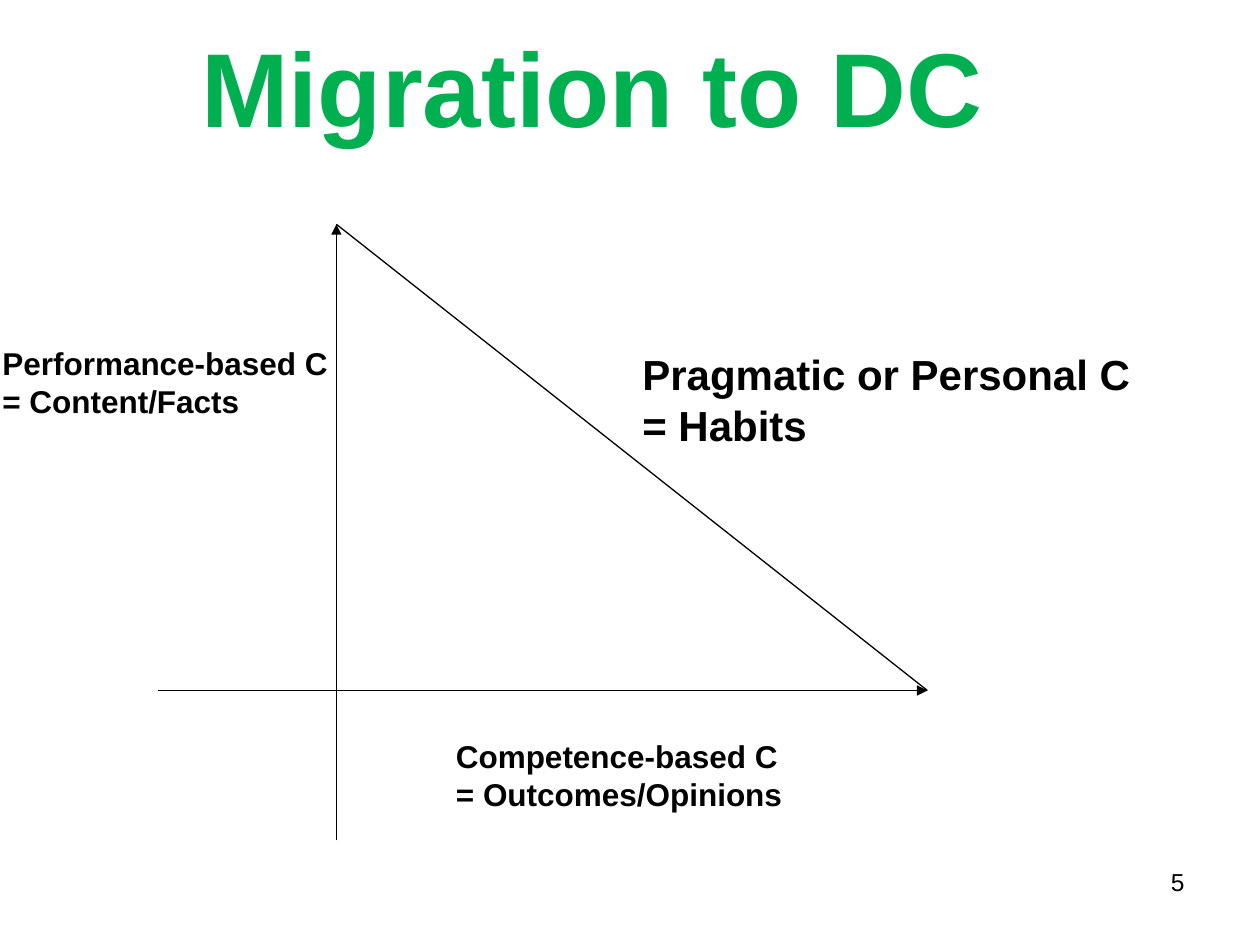
from typing import NamedTuple

from lxml.etree import SubElement
from pptx import Presentation
from pptx.dml.color import RGBColor
from pptx.enum.shapes import MSO_CONNECTOR
from pptx.enum.text import MSO_ANCHOR, MSO_AUTO_SIZE, PP_ALIGN
from pptx.oxml.ns import qn
from pptx.util import Inches, Pt

COLS, ROWS = 100, 75
WIDTH, HEIGHT = Inches(10), Inches(7.5)
BLACK, GREEN = "000000", "00B050"


class Point(NamedTuple):
    col: float
    row: float


class Box(NamedTuple):
    col: float
    row: float
    cols: float
    rows: float


class Line(NamedTuple):
    start: Point
    end: Point
    arrow: bool


class Label(NamedTuple):
    text: str
    box: Box
    size: int


TOP = Point(26.7, 17.8)
RIGHT = Point(73.6, 54.8)
LINES = [
    Line(Point(TOP.col, 66.7), TOP, True),
    Line(Point(12.5, RIGHT.row), RIGHT, True),
    Line(TOP, RIGHT, False),
]
LABELS = [
    Label("Competence-based C = Outcomes/Opinions", Box(35.2, 58, 29, 7.1), 18),
    Label("Performance-based C = Content/Facts", Box(-0.8, 26.8, 28.5, 7.1), 18),
    Label("Pragmatic or Personal C = Habits", Box(50, 27.2, 42, 9.1), 24),
]


def across(cols: float) -> int:
    return round(WIDTH * cols / COLS)


def down(rows: float) -> int:
    return round(HEIGHT * rows / ROWS)


def place(box: Box) -> tuple:
    return across(box.col), down(box.row), across(box.cols), down(box.rows)


def color(text: str) -> RGBColor:
    return RGBColor.from_string(text)


def write(frame, text: str, size: int, tint: str = BLACK,
          bold: bool = True, align=PP_ALIGN.LEFT) -> None:
    frame.word_wrap = True
    frame.text = text
    para = frame.paragraphs[0]
    para.alignment = align
    font = para.font
    font.name, font.size, font.bold = "Arial", Pt(size), bold
    font.color.rgb = color(tint)


def draw_line(slide, line: Line) -> None:
    start, end = line.start, line.end
    shape = slide.shapes.add_connector(
        MSO_CONNECTOR.STRAIGHT, across(start.col), down(start.row),
        across(end.col), down(end.row))
    shape.line.color.rgb = color(BLACK)
    shape.line.width = Pt(0.75)
    if line.arrow:
        SubElement(shape.line._get_or_add_ln(), qn("a:tailEnd"), type="triangle")
    SubElement(shape._element.spPr, qn("a:effectLst"))


def draw_label(slide, label: Label) -> None:
    frame = slide.shapes.add_textbox(*place(label.box)).text_frame
    write(frame, label.text, label.size)
    frame.auto_size = MSO_AUTO_SIZE.SHAPE_TO_FIT_TEXT


def main() -> None:
    deck = Presentation()
    deck.slide_width, deck.slide_height = WIDTH, HEIGHT
    slide = deck.slides.add_slide(deck.slide_layouts[5])

    title = slide.shapes.title
    title.left, title.top, title.width, title.height = place(Box(2, 0.5, 90, 12.5))
    write(title.text_frame, "Migration to DC", 60, GREEN, align=PP_ALIGN.CENTER)
    title.text_frame.vertical_anchor = MSO_ANCHOR.MIDDLE

    number = slide.shapes.add_textbox(*place(Box(71.7, 68.3, 23.3, 5.2)))
    write(number.text_frame, "5", 14, bold=False, align=PP_ALIGN.RIGHT)

    for line in LINES:
        draw_line(slide, line)
    for label in LABELS:
        draw_label(slide, label)
    deck.save("out.pptx")


if __name__ == "__main__":
    main()
